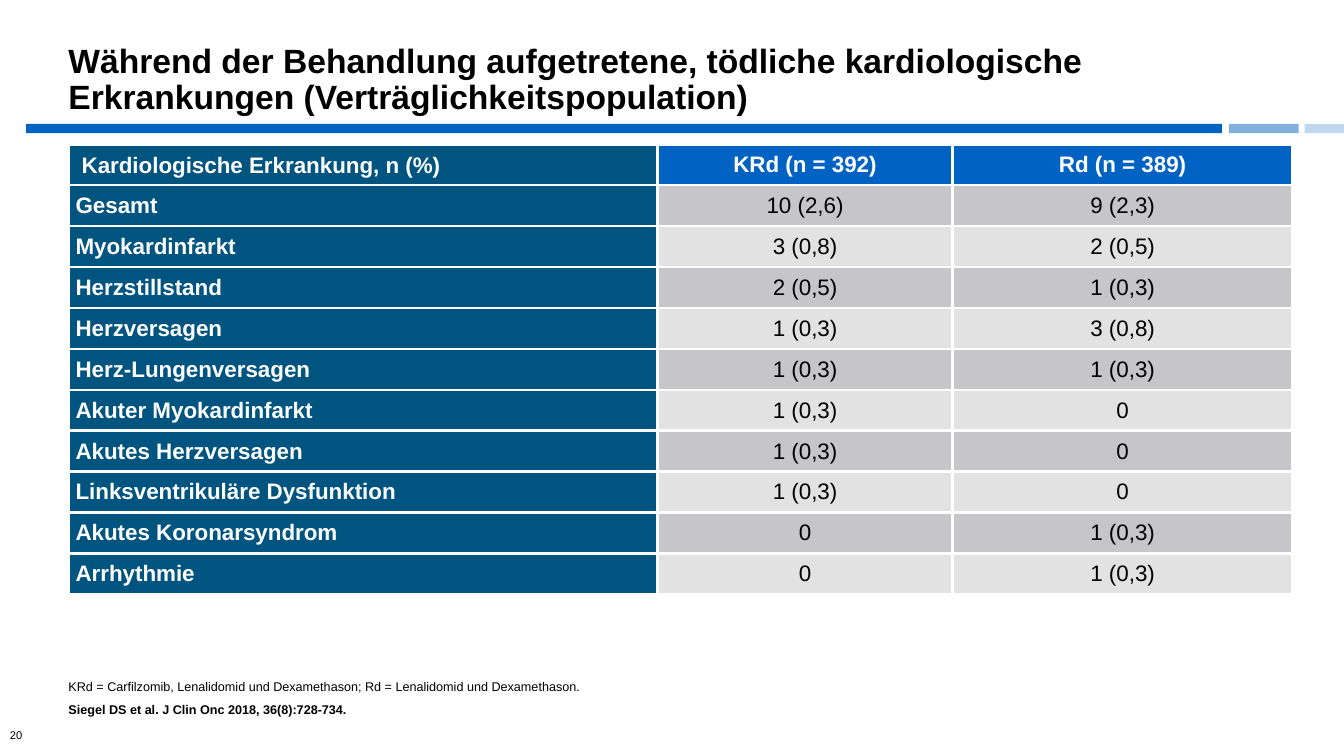
from lxml.etree import SubElement
from pptx import Presentation
from pptx.dml.color import RGBColor
from pptx.enum.shapes import MSO_SHAPE
from pptx.enum.text import MSO_ANCHOR as Anchor, PP_ALIGN as Align
from pptx.oxml import parse_xml
from pptx.oxml.ns import nsdecls, qn
from pptx.util import Inches, Pt

WHITE = RGBColor(0xFF, 0xFF, 0xFF)
BLACK = RGBColor(0, 0, 0)
BLUE = RGBColor(0x00, 0x63, 0xC3)
PETROL = RGBColor(0x00, 0x54, 0x80)
DARK_GREY = RGBColor(0xC6, 0xC5, 0xC7)
LIGHT_GREY = RGBColor(0xE3, 0xE2, 0xE3)

TITLE = ("Während der Behandlung aufgetretene, tödliche kardiologische "
         "Erkrankungen (Verträglichkeitspopulation)")
ABBREVIATIONS = ("KRd = Carfilzomib, Lenalidomid und Dexamethason; "
                 "Rd = Lenalidomid und Dexamethason.")
CITATION = "Siegel DS et al. J Clin Onc 2018, 36(8):728-734."
EVENTS = [
    ("Kardiologische Erkrankung, n (%)", "KRd (n = 392)", "Rd (n = 389)"),
    ("Gesamt", "10 (2,6)", "9 (2,3)"),
    ("Myokardinfarkt", "3 (0,8)", "2 (0,5)"),
    ("Herzstillstand", "2 (0,5)", "1 (0,3)"),
    ("Herzversagen", "1 (0,3)", "3 (0,8)"),
    ("Herz-Lungenversagen", "1 (0,3)", "1 (0,3)"),
    ("Akuter Myokardinfarkt", "1 (0,3)", "0"),
    ("Akutes Herzversagen", "1 (0,3)", "0"),
    ("Linksventrikuläre Dysfunktion", "1 (0,3)", "0"),
    ("Akutes Koronarsyndrom", "0", "1 (0,3)"),
    ("Arrhythmie", "0", "1 (0,3)"),
]
COLUMN_WIDTHS = (5.84, 2.93, 3.37)


def add_run(paragraph, text, size=16, color=BLACK, bold=False):
    run = paragraph.add_run()
    run.text = text
    run.font.name = "Arial"
    run.font.size = Pt(size)
    run.font.bold = bold
    run.font.color.rgb = color


def add_text(slide, box, text, anchor=Anchor.BOTTOM, line_spacing=1.0, **font):
    """Place a wrapped text box and return its paragraph."""
    frame = slide.shapes.add_textbox(*map(Inches, box)).text_frame
    frame.word_wrap = True
    frame.vertical_anchor = anchor
    paragraph = frame.paragraphs[0]
    paragraph.line_spacing = line_spacing
    add_run(paragraph, text, **font)
    return paragraph


def add_title_bar(slide, box):
    """Draw the segments, given as offset, width and opacity in percent."""
    left, top, width, height = box
    for offset, length, opacity in ((0, 11.86, 100), (11.93, 0.69, 50),
                                    (12.68, width - 12.68, 25)):
        bar = slide.shapes.add_shape(
            MSO_SHAPE.RECTANGLE,
            *map(Inches, (left + offset, top, length, height)))
        bar.shadow.inherit = False
        bar.line.fill.background()
        bar.fill.solid()
        bar.fill.fore_color.rgb = BLUE
        if opacity < 100:
            color = bar.fill._xPr.find(".//" + qn("a:srgbClr"))
            SubElement(color, qn("a:alpha"), val=str(opacity * 1000))


def add_borders(cell):
    properties = cell._tc.get_or_add_tcPr()
    for side in ("lnL", "lnR", "lnT", "lnB"):
        properties.append(parse_xml(
            f'<a:{side} {nsdecls("a")} w="{Pt(2.25)}"><a:solidFill>'
            f'<a:srgbClr val="{WHITE}"/></a:solidFill></a:{side}>'))


def cell_fill(row, column):
    if column == 0:
        return PETROL
    if row == 0:
        return BLUE
    return DARK_GREY if row % 2 else LIGHT_GREY


def add_event_table(slide, box):
    table = slide.shapes.add_table(
        len(EVENTS), len(COLUMN_WIDTHS), *map(Inches, box)).table
    for column, width in zip(table.columns, COLUMN_WIDTHS):
        column.width = Inches(width)
    for row, values in enumerate(EVENTS):
        for column, value in enumerate(values):
            cell = table.cell(row, column)
            heading = row == 0 or column == 0
            corner = row == column == 0
            side = 0.13 if corner else 0.07
            cell.margin_left = cell.margin_right = Inches(side)
            cell.margin_top = cell.margin_bottom = Inches(0.07)
            cell.vertical_anchor = Anchor.BOTTOM if corner else Anchor.MIDDLE
            add_borders(cell)
            cell.fill.solid()
            cell.fill.fore_color.rgb = cell_fill(row, column)
            paragraph = cell.text_frame.paragraphs[0]
            paragraph.alignment = Align.CENTER if column else Align.LEFT
            add_run(paragraph, value, bold=heading,
                    color=WHITE if heading else BLACK)


def add_footnote(slide, box):
    paragraph = add_text(slide, box, ABBREVIATIONS, line_spacing=1.5, size=9)
    paragraph.space_after = Pt(3)
    paragraph.add_line_break()
    add_run(paragraph, CITATION, size=9, bold=True)


def main():
    presentation = Presentation()
    presentation.slide_width = Inches(13.33)
    presentation.slide_height = Inches(7.5)
    slide = presentation.slides.add_slide(presentation.slide_layouts[6])
    add_text(slide, (0, 7.18, 0.67, 0.24), "20", anchor=Anchor.TOP, size=8)
    add_title_bar(slide, (0.26, 1.23, 13.07, 0.09))
    add_text(slide, (0.58, 0, 12.25, 1.21), TITLE, line_spacing=0.9,
             size=24, bold=True)
    add_event_table(slide, (0.68, 1.43, sum(COLUMN_WIDTHS), 4.47))
    add_footnote(slide, (0.58, 6.6, 11.05, 0.56))
    presentation.save("out.pptx")


if __name__ == "__main__":
    main()
